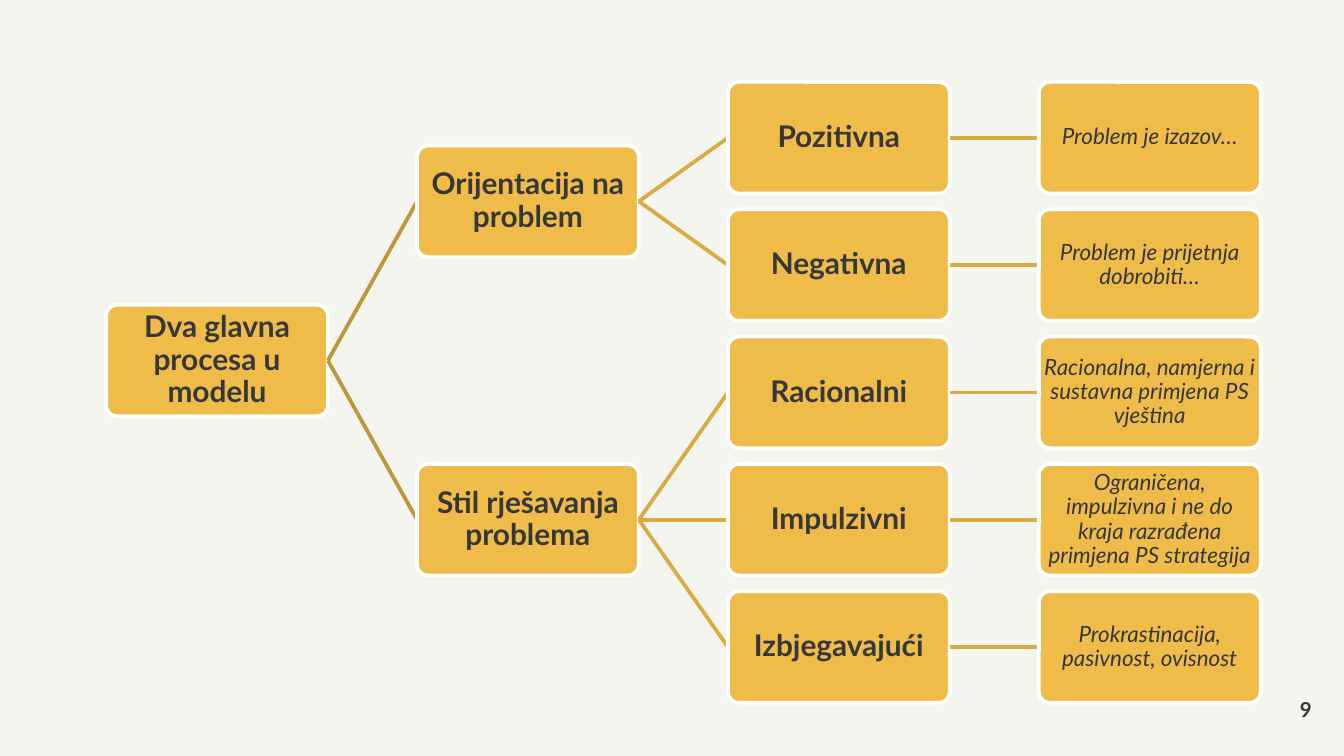
from dataclasses import dataclass

from lxml import etree
from pptx import Presentation
from pptx.dml.color import RGBColor
from pptx.enum.shapes import MSO_CONNECTOR, MSO_SHAPE
from pptx.enum.text import MSO_ANCHOR, PP_ALIGN
from pptx.oxml.ns import qn
from pptx.util import Inches, Pt

ROUNDED = MSO_SHAPE.ROUNDED_RECTANGLE
STRAIGHT = MSO_CONNECTOR.STRAIGHT
MIDDLE = MSO_ANCHOR.MIDDLE
CENTER, RIGHT = PP_ALIGN.CENTER, PP_ALIGN.RIGHT
LEFT_SIDE, RIGHT_SIDE = 1, 3

COLORS = {
    "background": "F5F5EF",
    "box": "EFBC49",
    "border": "FFFFFF",
    "text": "363739",
    "first_branch": "BF973A",
    "branch": "D9AB42",
}
HEADING = {"name": "Lato", "size": Pt(16), "bold": True}
DETAIL = {"name": "Lato", "size": Pt(12), "italic": True}
PAGE_NUMBER = {"name": "Lato", "size": Pt(11), "bold": True}

# Grid of four columns and five rows
BOX_W, BOX_H = 1.65, 0.83
GRID_LEFT, GRID_TOP = 0.79, 0.61
COLUMN_STEP = (7.73 - GRID_LEFT) / 3
ROW_STEP = (4.40 - GRID_TOP) / 4


@dataclass(frozen=True)
class Node:
    label: str
    row: float
    children: tuple["Node", ...] = ()


def color(key: str) -> RGBColor:
    return RGBColor.from_string(COLORS[key])


def write(shape, text: str, font_values: dict, align, inset: float) -> None:
    frame = shape.text_frame
    frame.word_wrap = True
    frame.vertical_anchor = MIDDLE
    for side in ("left", "top", "right", "bottom"):
        setattr(frame, f"margin_{side}", Inches(inset))
    paragraph = frame.paragraphs[0]
    paragraph.alignment = align
    paragraph.line_spacing = 0.9
    run = paragraph.add_run()
    run.text = text
    for attribute, value in font_values.items():
        setattr(run.font, attribute, value)
    run.font.color.rgb = color("text")


def draw_box(shapes, node: Node, level: int):
    box = shapes.add_shape(
        ROUNDED,
        Inches(GRID_LEFT + level * COLUMN_STEP),
        Inches(GRID_TOP + node.row * ROW_STEP),
        Inches(BOX_W),
        Inches(BOX_H),
    )
    box.adjustments[0] = 0.1
    box.shadow.inherit = False
    box.fill.solid()
    box.fill.fore_color.rgb = color("box")
    box.line.color.rgb = color("border")
    box.line.width = Pt(2)
    write(box, node.label, DETAIL if level == 3 else HEADING, CENTER, 0.01)
    return box


def draw_branch(shapes, parent_box, level: int):
    branch = shapes.add_connector(STRAIGHT, 0, 0, 0, 0)
    branch.begin_connect(parent_box, RIGHT_SIDE)
    branch.line.color.rgb = color("branch" if level else "first_branch")
    branch.line.width = Pt(2)
    etree.SubElement(branch.element.spPr, qn("a:effectLst"))
    return branch


def draw_tree(shapes, node: Node, level: int = 0):
    box = draw_box(shapes, node, level)
    for child in node.children:
        # The branch lies behind the box it leads to
        branch = draw_branch(shapes, box, level)
        child_box = draw_tree(shapes, child, level + 1)
        branch.end_connect(child_box, LEFT_SIDE)
    return box


def with_detail(label: str, row: int, detail: str) -> Node:
    return Node(label, row, (Node(detail, row),))


def centered(label: str, *children: Node) -> Node:
    row = sum(child.row for child in children) / len(children)
    return Node(label, row, children)


MODEL = centered(
    "Dva glavna procesa u modelu",
    centered(
        "Orijentacija na problem",
        with_detail("Pozitivna", 0, "Problem je izazov…"),
        with_detail("Negativna", 1, "Problem je prijetnja dobrobiti…"),
    ),
    centered(
        "Stil rješavanja problema",
        with_detail("Racionalni", 2, "Racionalna, namjerna i sustavna primjena PS vještina"),
        with_detail(
            "Impulzivni", 3,
            "Ograničena, impulzivna i ne do kraja razrađena primjena PS strategija",
        ),
        with_detail("Izbjegavajući", 4, "Prokrastinacija, pasivnost, ovisnost"),
    ),
)


def main() -> None:
    presentation = Presentation()
    presentation.slide_width = Inches(10)
    presentation.slide_height = Inches(10 * 9 / 16)
    slide = presentation.slides.add_slide(presentation.slide_layouts[6])
    slide.background.fill.solid()
    slide.background.fill.fore_color.rgb = color("background")

    # Page number
    page_number = slide.shapes.add_textbox(
        Inches(9.16), Inches(5.19), Inches(0.6), Inches(0.2)
    )
    write(page_number, "9", PAGE_NUMBER, RIGHT, 0)

    # Hierarchy of the model
    draw_tree(slide.shapes, MODEL)
    presentation.save("out.pptx")


if __name__ == "__main__":
    main()
